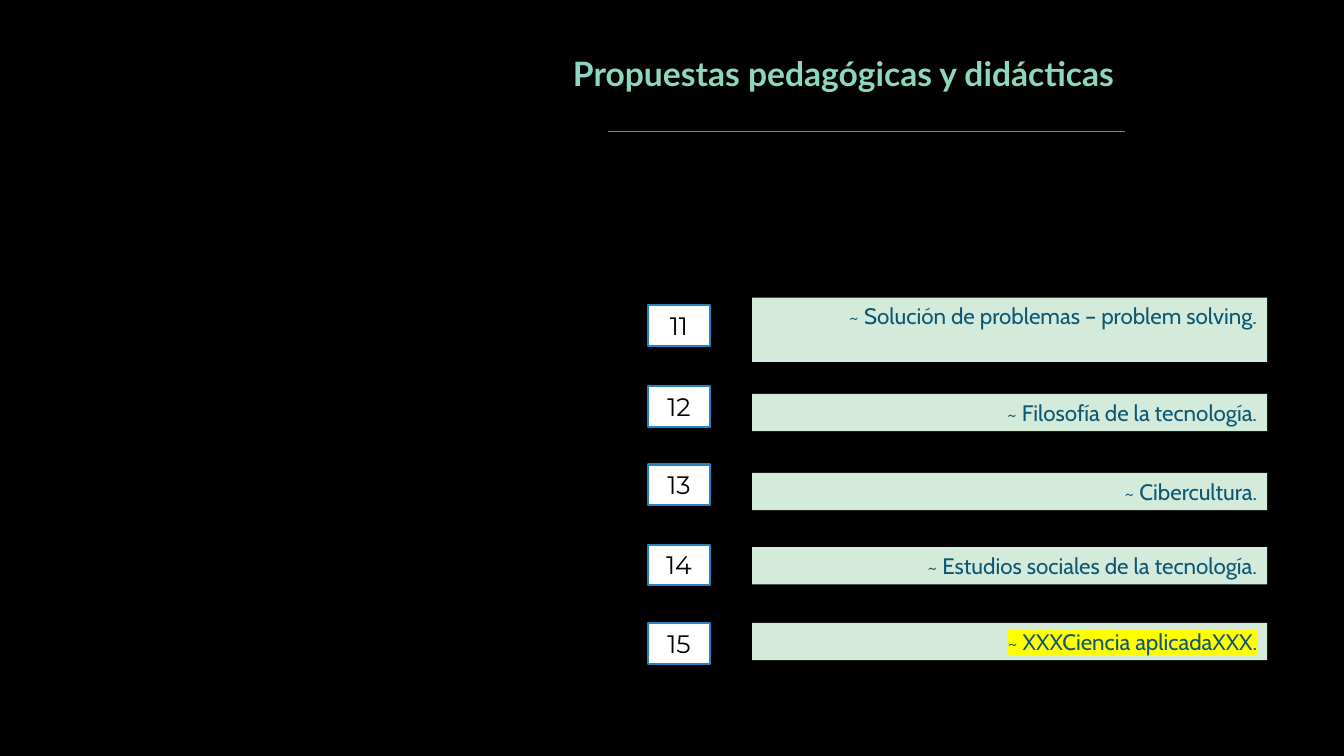
from dataclasses import dataclass

from lxml import etree
from pptx import Presentation
from pptx.dml.color import RGBColor
from pptx.enum import shapes, text
from pptx.oxml import ns
from pptx.util import Pt


@dataclass(frozen=True)
class Theme:
    background: str = "000000"
    title: str = "8DD6C1"
    rule: str = "7F7F7F"
    bar: str = "D4EBDB"
    bar_text: str = "0E5772"
    highlight: str = "FFFF00"
    number_fill: str = "FFFFFF"
    number_line: str = "2683C6"
    number_text: str = "000000"
    title_size: int = 24
    bar_size: int = 16
    number_size: int = 18


theme = Theme()
color = RGBColor.from_string


def write(shape, wording, font_name, size, font_color, alignment, bold=False):
    """Put one formatted line at the top of the shape and return its run."""
    frame = shape.text_frame
    frame.word_wrap = True
    frame.vertical_anchor = text.MSO_ANCHOR.TOP
    frame.text = wording
    paragraph = frame.paragraphs[0]
    paragraph.alignment = alignment
    run = paragraph.runs[0]
    run.font.name = font_name
    run.font.size = Pt(size)
    run.font.bold = bold
    run.font.color.rgb = color(font_color)
    return run


def add_box(left, top, width, height, fill):
    box = slide.shapes.add_shape(
        shapes.MSO_SHAPE.RECTANGLE, Pt(left), Pt(top), Pt(width), Pt(height))
    box.shadow.inherit = False
    box.fill.solid()
    box.fill.fore_color.rgb = color(fill)
    box.line.fill.background()
    return box


presentation = Presentation()
presentation.slide_width = Pt(960)
presentation.slide_height = Pt(540)
slide = presentation.slides.add_slide(presentation.slide_layouts[6])
slide.background.fill.solid()
slide.background.fill.fore_color.rgb = color(theme.background)

rule = slide.shapes.add_connector(
    shapes.MSO_CONNECTOR.STRAIGHT, Pt(803.5), Pt(94), Pt(434.5), Pt(94))
rule.line.color.rgb = color(theme.rule)
rule.line.width = Pt(0.75)
etree.SubElement(rule._element.spPr, ns.qn("a:effectLst"))

# Number, number top, bar top, bar height, wording, highlighted
proposals = [
    ("11", 218, 212.5, 46, "~ Solución de problemas – problem solving.", False),
    ("12", 275.8, 281.4, 26.6, "~ Filosofía de la tecnología.", False),
    ("13", 331.8, 337.8, 26.6, "~ Cibercultura.", False),
    ("14", 389, 390.8, 26.6, "~ Estudios sociales de la tecnología.", False),
    ("15", 445, 445, 26.6, "~ XXXCiencia aplicadaXXX.", True),
]
for number, number_top, bar_top, bar_height, wording, highlighted in proposals:
    bar = add_box(537.2, bar_top, 368, bar_height, theme.bar)
    run = write(bar, wording, "Cabin", theme.bar_size, theme.bar_text,
                text.PP_ALIGN.RIGHT)
    if highlighted:
        highlight = etree.Element(ns.qn("a:highlight"))
        etree.SubElement(highlight, ns.qn("a:srgbClr"), val=theme.highlight)
        run.font._element.find(ns.qn("a:solidFill")).addnext(highlight)

    number_box = add_box(463, number_top, 44, 29, theme.number_fill)
    number_box.line.color.rgb = color(theme.number_line)
    number_box.line.width = Pt(1.5)
    write(number_box, number, "Montserrat", theme.number_size,
          theme.number_text, text.PP_ALIGN.CENTER)

title = slide.shapes.add_textbox(Pt(152.8), Pt(34.6), Pt(650), Pt(36))
write(title, "Propuestas pedagógicas y didácticas", "Lato", theme.title_size,
      theme.title, text.PP_ALIGN.RIGHT, bold=True)

presentation.save("out.pptx")
